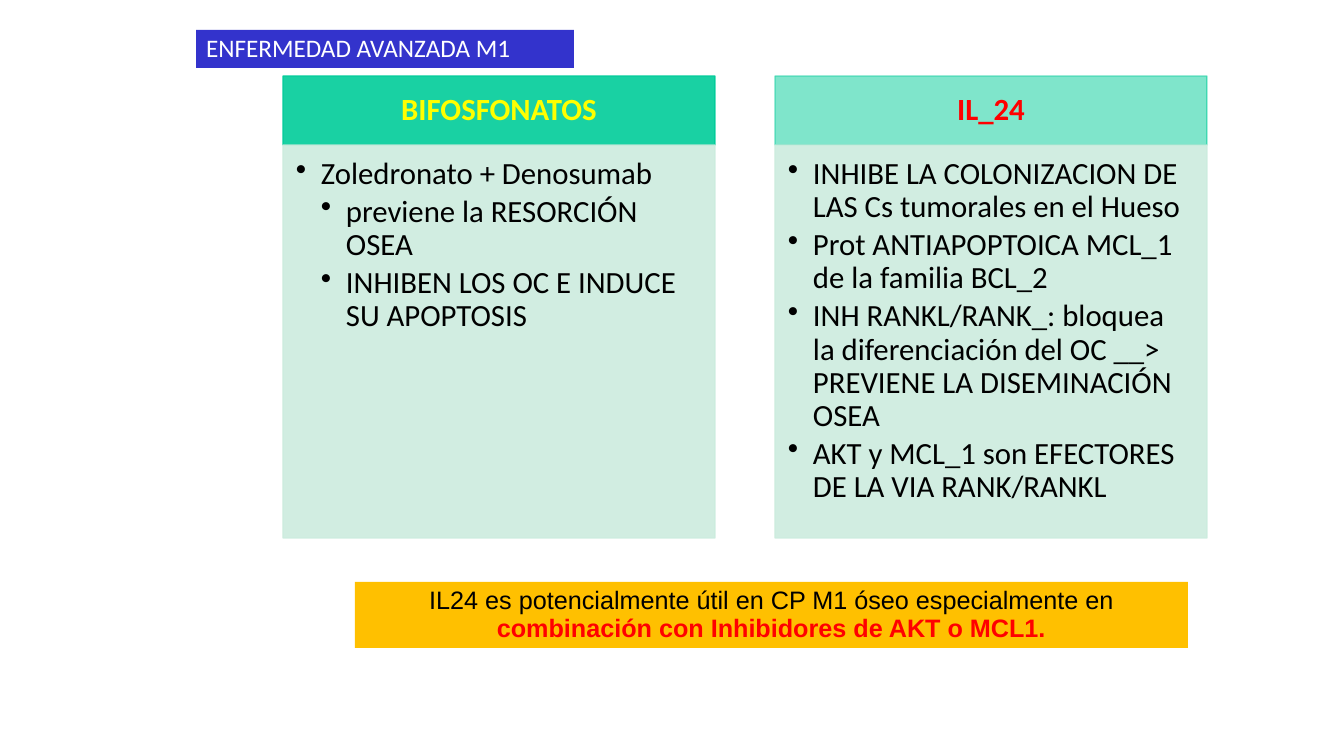
from lxml.etree import SubElement
from pptx import Presentation
from pptx.dml.color import RGBColor
from pptx.enum.shapes import MSO_SHAPE
from pptx.enum.text import MSO_ANCHOR, PP_ALIGN
from pptx.oxml.ns import qn
from pptx.util import Emu, Inches, Pt

BLACK = RGBColor(0x00, 0x00, 0x00)
WHITE = RGBColor(0xFF, 0xFF, 0xFF)
YELLOW = RGBColor(0xFF, 0xFF, 0x00)
RED = RGBColor(0xFF, 0x00, 0x00)
GREEN = RGBColor(0x00, 0xCC, 0x99)
MINT = RGBColor(0xCC, 0xEC, 0xDE)
AMBER = RGBColor(0xFF, 0xC0, 0x00)
BLUE = RGBColor(0x33, 0x33, 0xCC)

TAG = "ENFERMEDAD AVANZADA M1"
# heading, heading colour, heading opacity, bullets as (level, text)
COLUMNS = [
    ("BIFOSFONATOS", YELLOW, 90, [
        (0, "Zoledronato + Denosumab"),
        (1, "previene la RESORCIÓN OSEA"),
        (1, "INHIBEN LOS OC E INDUCE SU APOPTOSIS"),
    ]),
    ("IL_24", RED, 50, [
        (0, "INHIBE LA COLONIZACION DE LAS Cs tumorales en el Hueso"),
        (0, "Prot ANTIAPOPTOICA MCL_1 de la familia BCL_2"),
        (0, "INH RANKL/RANK_: bloquea la diferenciación del OC __> "
            "PREVIENE LA DISEMINACIÓN OSEA"),
        (0, "AKT y MCL_1 son EFECTORES DE LA VIA RANK/RANKL"),
    ]),
]
CONCLUSION = [
    ("IL24 es potencialmente útil en CP M1 óseo especialmente en ", BLACK, False),
    ("combinación con Inhibidores de AKT o MCL1.", RED, True),
]

LEFT, TOP, COL_W, COL_STEP = 283, 76, 432, 492
HEAD_H, BODY_H = 69, 393
INDENT = 25


def px(n):
    return Emu(round(n * Inches(1) / 100.8))


def add_box(s, x, y, w, h, color, opacity=100, outlined=False,
            insets=(10, 5, 10, 5), anchor=MSO_ANCHOR.TOP):
    """Add a filled rectangle and return its text frame."""
    sp = s.shapes.add_shape(MSO_SHAPE.RECTANGLE, px(x), px(y), px(w), px(h))
    sp.shadow.inherit = False
    sp.fill.solid()
    sp.fill.fore_color.rgb = color
    if outlined:
        sp.line.color.rgb = color
        sp.line.width = Pt(1)
    else:
        sp.line.fill.background()
    if opacity < 100:
        for clr in sp.element.spPr.iter(qn("a:srgbClr")):
            SubElement(clr, qn("a:alpha"), val=str(opacity * 1000))
    tf = sp.text_frame
    tf.word_wrap = True
    tf.vertical_anchor = anchor
    tf.margin_left, tf.margin_top, tf.margin_right, tf.margin_bottom = map(px, insets)
    return tf


def add_run(p, text, font, size, color, bold=False):
    r = p.add_run()
    r.text = text
    r.font.name = font
    r.font.size = Pt(size)
    r.font.bold = bold
    r.font.color.rgb = color


def set_bullet(p, level):
    p.level = level
    pPr = p._p.get_or_add_pPr()
    pPr.set("marL", str(px(INDENT * (level + 1))))
    pPr.set("indent", str(-px(INDENT)))
    SubElement(pPr, qn("a:buChar"), char="•")


def add_column(s, x, heading, color, opacity, bullets):
    tf = add_box(s, x, TOP, COL_W, HEAD_H, GREEN, opacity, True,
                 (17, 10, 17, 10), MSO_ANCHOR.MIDDLE)
    p = tf.paragraphs[0]
    p.alignment = PP_ALIGN.CENTER
    p.line_spacing = 0.9
    add_run(p, heading, "Calibri", 22, color, True)

    tf = add_box(s, x, TOP + HEAD_H, COL_W, BODY_H, MINT, 90, True,
                 (13, 13, 17, 19))
    for i, (level, text) in enumerate(bullets):
        p = tf.add_paragraph() if i else tf.paragraphs[0]
        set_bullet(p, level)
        p.alignment = PP_ALIGN.LEFT
        p.line_spacing = 0.9
        p.space_after = Pt(3.3)
        add_run(p, text, "Calibri", 22, BLACK)


def main():
    prs = Presentation()
    prs.slide_width, prs.slide_height = px(1344), px(756)
    s = prs.slides.add_slide(prs.slide_layouts[6])

    for i, column in enumerate(COLUMNS):
        add_column(s, LEFT + i * COL_STEP, *column)

    p = add_box(s, 355, 582, 833, 66, AMBER, anchor=MSO_ANCHOR.MIDDLE).paragraphs[0]
    p.alignment = PP_ALIGN.CENTER
    p.line_spacing = 0.93
    for text, color, bold in CONCLUSION:
        add_run(p, text, "Arial", 18, color, bold)

    p = add_box(s, 196, 30, 378, 38, BLUE).paragraphs[0]
    p.alignment = PP_ALIGN.LEFT
    p.line_spacing = 0.93
    add_run(p, TAG, "Calibri", 18, WHITE)

    prs.save("out.pptx")


if __name__ == "__main__":
    main()
